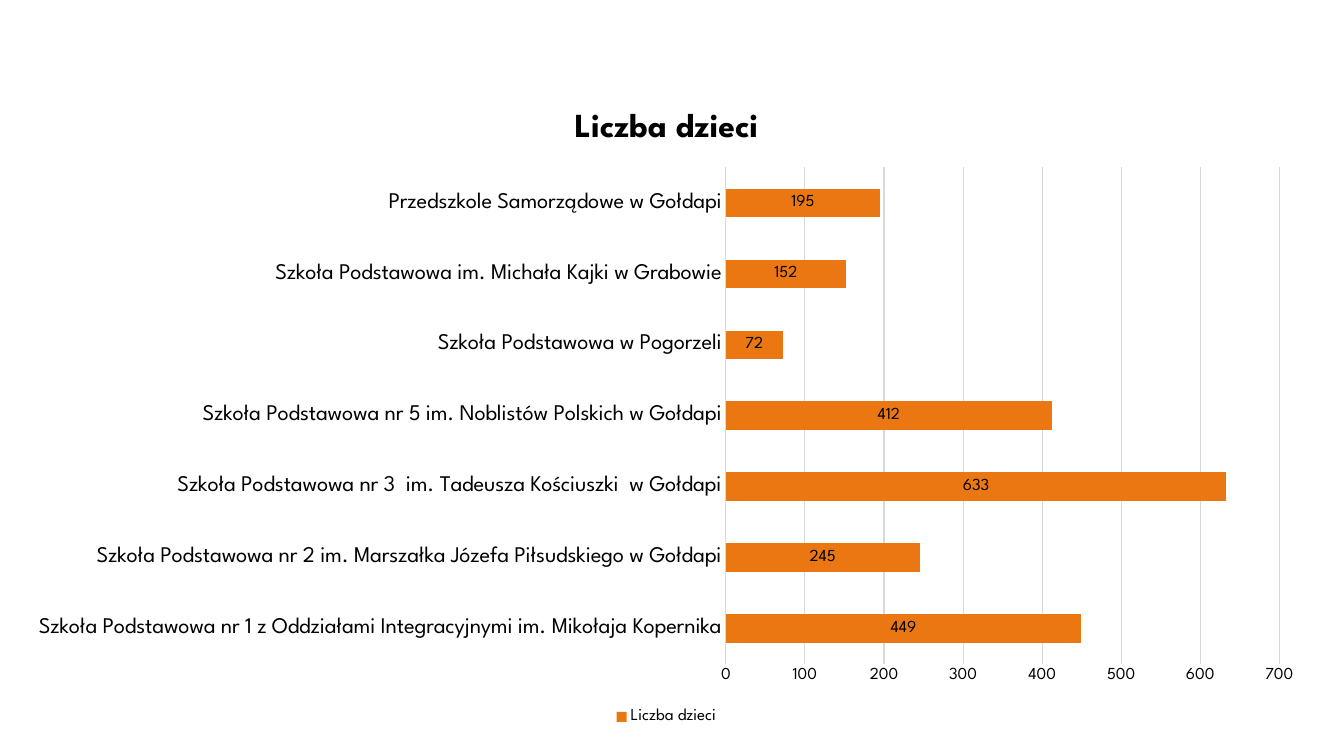
from lxml import etree
from pptx import Presentation
from pptx.chart.data import CategoryChartData
from pptx.dml.color import RGBColor
from pptx.enum import chart as kinds
from pptx.oxml import ns
from pptx.util import Inches, Pt

FACE = "League Spartan"
BLACK, GREY, ORANGE = "000000", "D9D9D9", "EB7712"
LEFT, TOP, WIDTH, HEIGHT = 0.13, 0.85, 12.96, 6.38
PUPILS = [
    ("Szkoła Podstawowa nr 1 z Oddziałami Integracyjnymi im. Mikołaja Kopernika", 449),
    ("Szkoła Podstawowa nr 2 im. Marszałka Józefa Piłsudskiego w Gołdapi", 245),
    ("Szkoła Podstawowa nr 3  im. Tadeusza Kościuszki  w Gołdapi", 633),
    ("Szkoła Podstawowa nr 5 im. Noblistów Polskich w Gołdapi", 412),
    ("Szkoła Podstawowa w Pogorzeli", 72),
    ("Szkoła Podstawowa im. Michała Kajki w Grabowie", 152),
    ("Przedszkole Samorządowe w Gołdapi", 195),
]


def tint(code):
    return RGBColor.from_string(code)


def style(font, size, bold=False):
    font.name, font.size, font.bold = FACE, Pt(size), bold
    font.color.rgb = tint(BLACK)


def rule(line):
    line.color.rgb = tint(GREY)
    line.width = Pt(0.75)


def place(chart, left, top, width, height):
    """Fix the inner plot area, given in inches on the slide."""
    plot = chart._chartSpace.find(".//" + ns.qn("c:plotArea"))
    for old in plot.findall(ns.qn("c:layout")):
        plot.remove(old)
    layout = etree.Element(ns.qn("c:layout"))
    manual = etree.SubElement(layout, ns.qn("c:manualLayout"))
    parts = [
        ("layoutTarget", "inner"), ("xMode", "edge"), ("yMode", "edge"),
        ("x", (left - LEFT) / WIDTH), ("y", (top - TOP) / HEIGHT),
        ("w", width / WIDTH), ("h", height / HEIGHT),
    ]
    for tag, value in parts:
        etree.SubElement(manual, ns.qn("c:" + tag)).set("val", str(value))
    plot.insert(0, layout)


def head(chart, words):
    chart.has_title = True
    frame = chart.chart_title.text_frame
    frame.text = words
    style(frame.paragraphs[0].runs[0].font, 24, True)
    chart.chart_title.include_in_layout = False


def axes(chart):
    for axis, size in ((chart.category_axis, 16), (chart.value_axis, 12)):
        axis.major_tick_mark = axis.minor_tick_mark = kinds.XL_TICK_MARK.NONE
        style(axis.tick_labels.font, size)
    chart.category_axis.has_major_gridlines = False
    rule(chart.category_axis.format.line)
    scale = chart.value_axis
    scale.minimum_scale, scale.maximum_scale, scale.major_unit = 0, 700, 100
    scale.format.line.fill.background()
    rule(scale.major_gridlines.format.line)


def bars(chart):
    plot = chart.plots[0]
    plot.gap_width = 150
    plot.vary_by_categories = False
    fill = plot.series[0].format.fill
    fill.solid()
    fill.fore_color.rgb = tint(ORANGE)
    labels = plot.series[0].data_labels
    labels.show_value = True
    labels.position = kinds.XL_LABEL_POSITION.CENTER
    style(labels.font, 12)


def legend(chart):
    chart.has_legend = True
    chart.legend.position = kinds.XL_LEGEND_POSITION.BOTTOM
    chart.legend.include_in_layout = False
    style(chart.legend.font, 12)


def main():
    deck = Presentation()
    deck.slide_width, deck.slide_height = Inches(13.33), Inches(7.5)
    slide = deck.slides.add_slide(deck.slide_layouts[6])

    # Pupils per school
    data = CategoryChartData()
    data.categories = [name for name, _ in PUPILS]
    data.add_series("Liczba dzieci", [count for _, count in PUPILS])
    box = [Inches(side) for side in (LEFT, TOP, WIDTH, HEIGHT)]
    chart = slide.shapes.add_chart(
        kinds.XL_CHART_TYPE.BAR_CLUSTERED, *box, data).chart
    style(chart.font, 10)

    # Chart parts
    head(chart, "Liczba dzieci")
    axes(chart)
    bars(chart)
    legend(chart)
    place(chart, 7.2, 1.66, 5.49, 4.93)
    deck.save("out.pptx")


if __name__ == "__main__":
    main()
